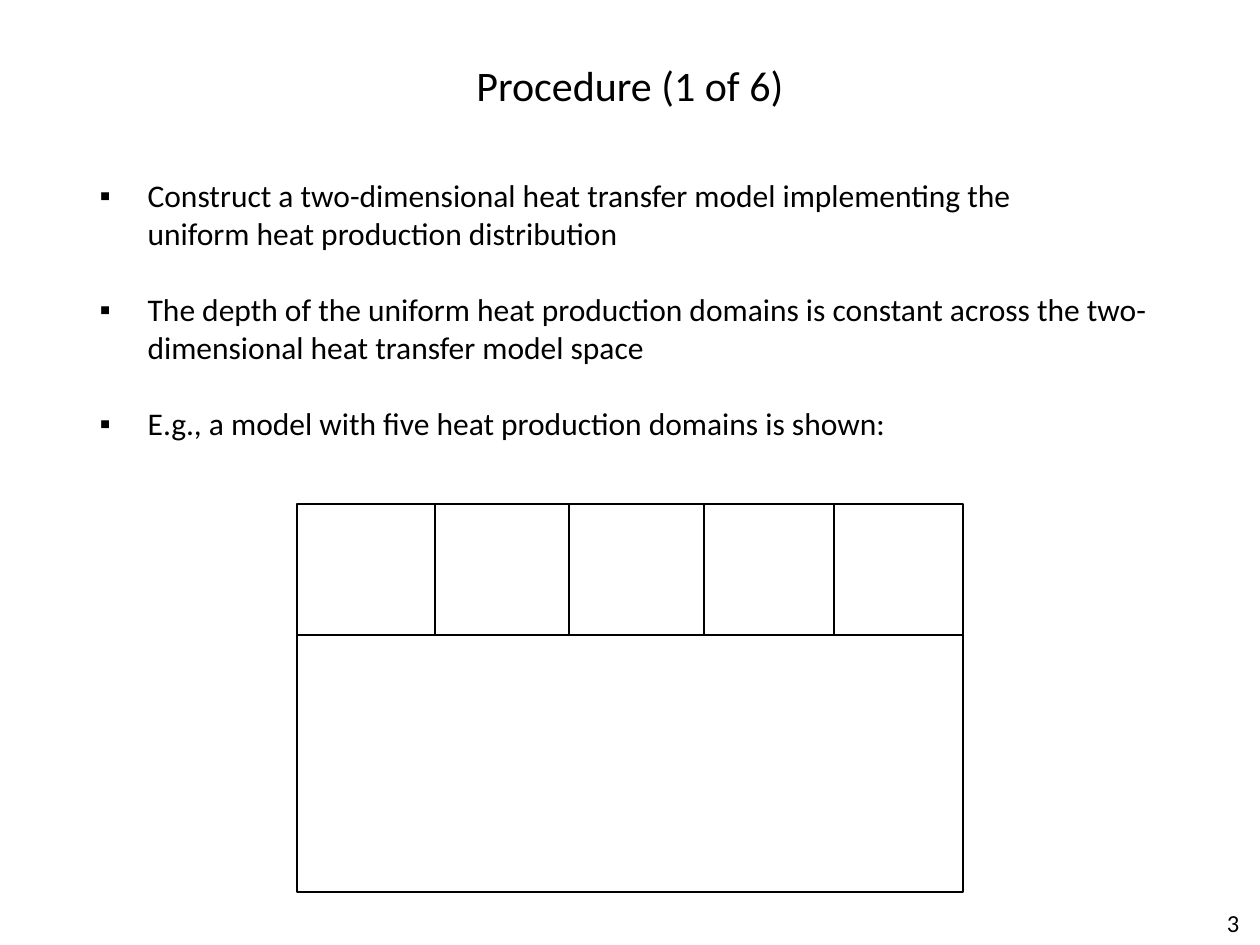
from lxml.etree import SubElement
from pptx import Presentation
from pptx.dml.color import RGBColor
from pptx.enum.shapes import MSO_CONNECTOR, MSO_SHAPE
from pptx.enum.text import MSO_ANCHOR, MSO_AUTO_SIZE, PP_ALIGN
from pptx.oxml.ns import qn
from pptx.util import Pt

PX = 914400 / 126
BLACK = RGBColor(0, 0, 0)
WHITE = RGBColor(255, 255, 255)


def px(*lengths):
    return [round(length * PX) for length in lengths]


def write(shape, box, paragraphs, size, align=PP_ALIGN.LEFT, gap=0, bullet=None, wrap=False):
    shape.left, shape.top, shape.width, shape.height = px(*box)
    frame = shape.text_frame
    frame.auto_size = MSO_AUTO_SIZE.NONE
    frame.word_wrap = wrap
    frame.vertical_anchor = MSO_ANCHOR.TOP
    frame.text = "\n".join(paragraphs)
    for paragraph in frame.paragraphs:
        paragraph.alignment = align
        paragraph.space_before = Pt(0)
        paragraph.space_after = Pt(gap)
        for run in paragraph.runs:
            run.font.name = "Calibri"
            run.font.size = Pt(size)
            run.font.color.rgb = BLACK
        if bullet:
            properties = paragraph._p.get_or_add_pPr()
            indent = px(48)[0]
            properties.set("marL", str(indent))
            properties.set("indent", str(-indent))
            SubElement(properties, qn("a:buChar")).set("char", bullet)


prs = Presentation()
prs.slide_width, prs.slide_height = px(1260, 945)
slide = prs.slides.add_slide(prs.slide_layouts[1])
title, steps = slide.placeholders

# Title and procedure steps
write(title, (462, 53, 336, 63), ["Procedure (1 of 6)"], 24, align=PP_ALIGN.CENTER)
write(steps, (87, 170, 1085, 280), [
    "Construct a two-dimensional heat transfer model implementing the\v"
    "uniform heat production distribution",
    "The depth of the uniform heat production domains is constant across the two-\v"
    "dimensional heat transfer model space",
    "E.g., a model with five heat production domains is shown:",
], 18, gap=22, bullet="▪")

# Slide number
page_number = slide.shapes.add_textbox(0, 0, 0, 0)
write(page_number, (1206, 902, 54, 43), ["3"], 14, align=PP_ALIGN.CENTER)

# Model space
LEFT, TOP, RIGHT, BOTTOM = 297, 504, 963, 892
DOMAIN_DEPTH = 635
model = slide.shapes.add_shape(
    MSO_SHAPE.RECTANGLE, *px(LEFT, TOP, RIGHT - LEFT, BOTTOM - TOP))
model.shadow.inherit = False
model.fill.solid()
model.fill.fore_color.rgb = WHITE
model.line.color.rgb = BLACK
model.line.width = Pt(1.5)

# Base of the heat production domains, then the dividers between them
boundaries = [(LEFT, DOMAIN_DEPTH, RIGHT, DOMAIN_DEPTH)]
boundaries += [(x, TOP, x, DOMAIN_DEPTH) for x in (435, 569, 704, 834)]
for ends in boundaries:
    boundary = slide.shapes.add_connector(MSO_CONNECTOR.STRAIGHT, *px(*ends))
    boundary.line.color.rgb = BLACK
    boundary.line.width = Pt(1.5)
    SubElement(boundary._element.spPr, qn("a:effectLst"))

prs.save("out.pptx")
